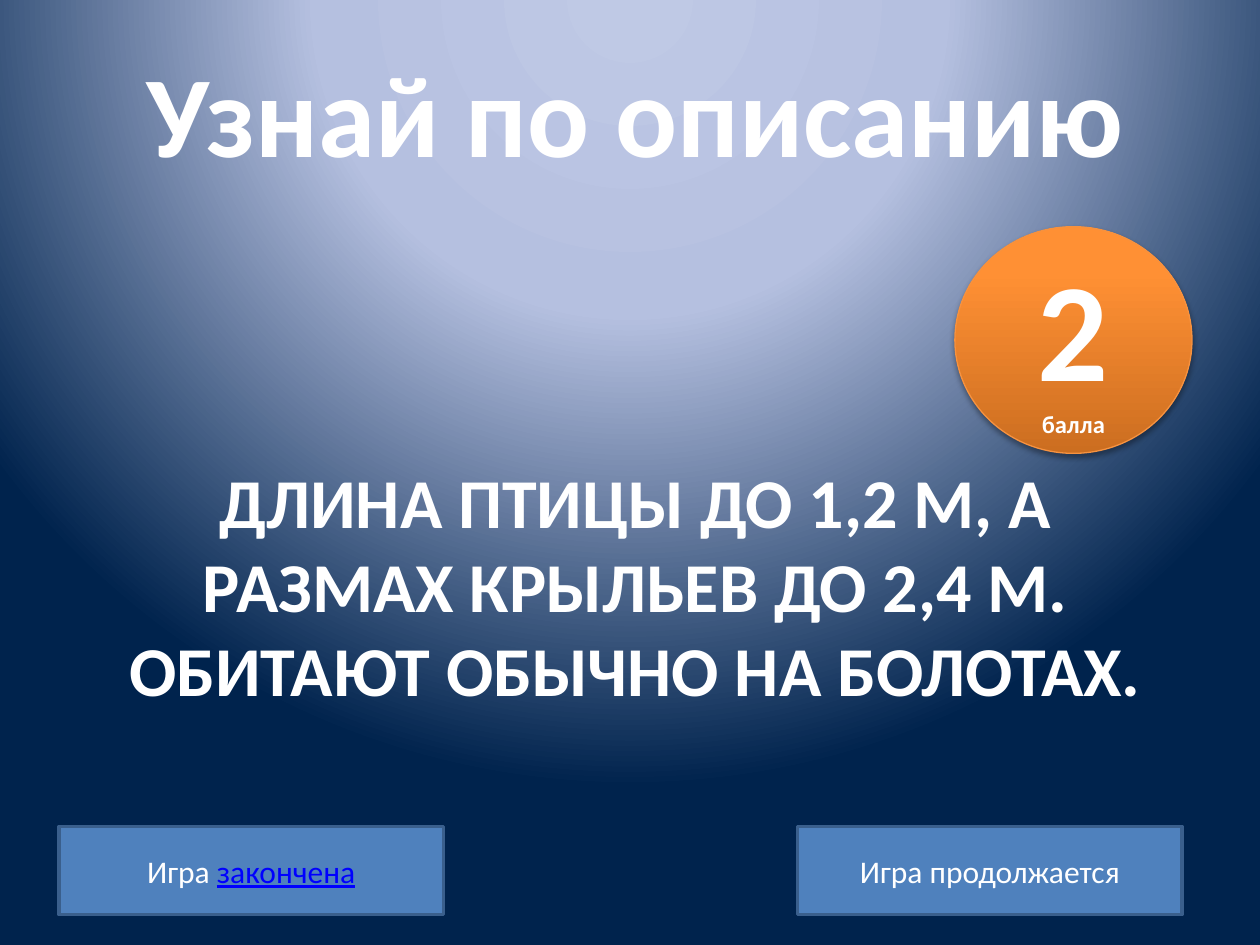
import pptx
import pptx.dml.color
import pptx.enum.shapes
import pptx.enum.text
import pptx.oxml
import pptx.oxml.ns
import pptx.util
from pptx.util import Cm

FONT = "Calibri"
WHITE = "FFFFFF"
SHAPE = pptx.enum.shapes.MSO_SHAPE
ANCHOR = pptx.enum.text.MSO_ANCHOR
NS = pptx.oxml.ns.nsdecls("a")


def color(hex_code):
    return pptx.dml.color.RGBColor.from_string(hex_code)


def place(shape, box):
    shape.left, shape.top, shape.width, shape.height = (Cm(v) for v in box)


def add_run(paragraph, text, size=18, bold=False, hex_code=WHITE, underline=False):
    paragraph.alignment = pptx.enum.text.PP_ALIGN.CENTER
    run = paragraph.add_run()
    run.text = text
    font = run.font
    font.name, font.size, font.bold = FONT, pptx.util.Pt(size), bold
    font.color.rgb = color(hex_code)
    if underline:
        font.underline = True


def set_frame(frame, anchor):
    frame.word_wrap = True
    frame.auto_size = pptx.enum.text.MSO_AUTO_SIZE.NONE
    frame.vertical_anchor = anchor


def set_gradient(owner, fill, stops, shade):
    """Fill with (percent, colour) stops; shade is the XML of the direction."""
    fill.gradient()
    gradient = owner.element.find(".//" + pptx.oxml.ns.qn("a:gradFill"))
    for child in list(gradient):
        gradient.remove(child)
    stop_xml = "".join(
        f'<a:gs pos="{percent * 1000}"><a:srgbClr val="{code}"/></a:gs>'
        for percent, code in stops)
    gradient.append(pptx.oxml.parse_xml(f"<a:gsLst {NS}>{stop_xml}</a:gsLst>"))
    gradient.append(pptx.oxml.parse_xml(shade))


def add_panel(slide, kind, box, line_color, line_width):
    panel = slide.shapes.add_shape(kind, *(Cm(v) for v in box))
    panel.line.color.rgb = color(line_color)
    panel.line.width = pptx.util.Pt(line_width)
    panel.shadow.inherit = False
    set_frame(panel.text_frame, ANCHOR.MIDDLE)
    return panel


def paint_background(slide):
    set_gradient(
        slide, slide.background.fill,
        [(0, "BFC9E5"), (40, "B5C0E0"), (100, "00234D")],
        f'<a:path {NS} path="circle"><a:fillToRect l="50000" t="-80000" '
        'r="50000" b="180000"/></a:path>')


def add_description(slide, box):
    description = slide.shapes.title
    place(description, box)
    set_frame(description.text_frame, ANCHOR.TOP)
    add_run(description.text_frame.paragraphs[0],
            "ДЛИНА ПТИЦЫ ДО 1,2 М, А РАЗМАХ КРЫЛЬЕВ ДО 2,4 М. "
            "ОБИТАЮТ ОБЫЧНО НА БОЛОТАХ.", size=40, bold=True)


def add_heading(slide, box):
    heading = slide.shapes.add_textbox(*(Cm(v) for v in box))
    set_frame(heading.text_frame, ANCHOR.BOTTOM)
    add_run(heading.text_frame.paragraphs[0], "Узнай по описанию", size=66, bold=True)


def add_score(slide, box):
    score = add_panel(slide, SHAPE.OVAL, box, "F69240", 0.75)
    set_gradient(score, score.fill,
                 [(0, "CC6E20"), (80, "FF9034"), (100, "FF9136")],
                 f'<a:lin {NS} ang="16200000" scaled="0"/>')
    # Soft shadow straight below the disc
    effects = score.element.spPr.find(pptx.oxml.ns.qn("a:effectLst"))
    effects.append(pptx.oxml.parse_xml(
        f'<a:outerShdw {NS} blurRad="{pptx.util.Pt(3.1)}" dist="{pptx.util.Pt(1.8)}" '
        'dir="5400000" rotWithShape="0"><a:srgbClr val="000000">'
        '<a:alpha val="35000"/></a:srgbClr></a:outerShdw>'))
    frame = score.text_frame
    add_run(frame.paragraphs[0], "2", size=80, bold=True)
    add_run(frame.add_paragraph(), "балла", size=14, bold=True)


def add_button(slide, box, label, link_text=""):
    button = add_panel(slide, SHAPE.RECTANGLE, box, "3A5F8C", 2)
    button.fill.solid()
    button.fill.fore_color.rgb = color("4F81BD")
    caption = button.text_frame.paragraphs[0]
    add_run(caption, label)
    if link_text:
        add_run(caption, link_text, hex_code="0000FF", underline=True)


def main():
    deck = pptx.Presentation()
    deck.slide_width, deck.slide_height = Cm(25.4), Cm(19.05)
    slide = deck.slides.add_slide(deck.slide_layouts[5])
    paint_background(slide)

    # Heading, question and its value
    add_description(slide, (2.01, 9.12, 21.59, 5.56))
    add_heading(slide, (2.01, 0.58, 21.59, 3.18))
    add_score(slide, (19.25, 4.57, 4.78, 4.57))

    # Game buttons
    add_button(slide, (1.19, 16.66, 7.75, 1.78), "Игра ", "закончена")
    add_button(slide, (16.08, 16.66, 7.75, 1.78), "Игра продолжается")
    deck.save("out.pptx")


if __name__ == "__main__":
    main()
